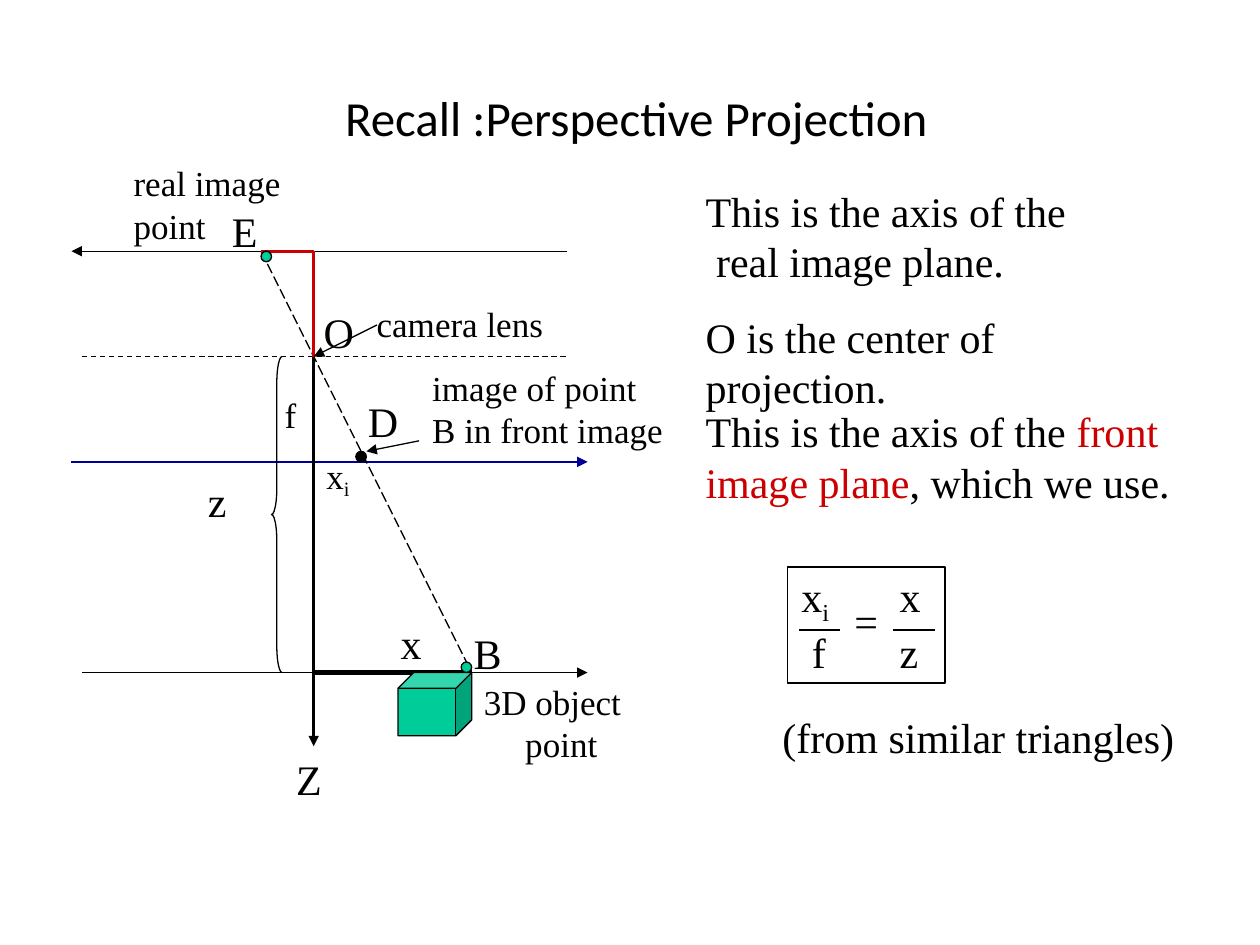
import pptx
import pptx.util
import pptx.dml.color
import pptx.enum.shapes
import pptx.enum.dml
import pptx.enum.text
import pptx.oxml

Inch, Pt = pptx.util.Inches, pptx.util.Pt
RGB = pptx.dml.color.RGBColor
KIND = pptx.enum.shapes.MSO_SHAPE
DASH = pptx.enum.dml.MSO_LINE
NS = 'xmlns:a="http://schemas.openxmlformats.org/drawingml/2006/main"'

BLACK = RGB(0, 0, 0)
RED = RGB(0xCC, 0, 0)
BLUE = RGB(0, 0, 0x99)
GREEN = RGB(0, 0xCC, 0x99)
SERIF = "Times New Roman"

# The diagram grid starts at the lens O; one unit is the focal length
UNIT = 0.836
DOT = 0.1  # size of a point, in units


def col(n):
    return Inch(2.49 + n * UNIT)


def row(n):
    return Inch(2.83 + n * UNIT)


def span(n):
    return Inch(n * UNIT)


def line(slide, start, end, color=BLACK, width=0.75, dash=None, arrow=False):
    """Straight line between two points given as (x, y) lengths."""
    kind = pptx.enum.shapes.MSO_CONNECTOR.STRAIGHT
    link = slide.shapes.add_connector(kind, *start, *end)
    link.line.color.rgb = color
    link.line.width = Pt(width)
    if dash:
        link.line.dash_style = dash
    if arrow:
        link.line._get_or_add_ln().append(pptx.oxml.parse_xml(
            f'<a:tailEnd {NS} type="triangle" w="med" len="med"/>'))
    link._element.spPr.append(pptx.oxml.parse_xml(f"<a:effectLst {NS}/>"))


def ray(slide, start, end, **look):
    """Line between two points of the diagram grid."""
    line(slide, (col(start[0]), row(start[1])),
         (col(end[0]), row(end[1])), **look)


def form(slide, kind, box, fill=None):
    """Preset shape with a thin black outline."""
    shape = slide.shapes.add_shape(kind, *box)
    shape.shadow.inherit = False
    if fill is None:
        shape.fill.background()
    else:
        shape.fill.solid()
        shape.fill.fore_color.rgb = fill
    shape.line.color.rgb = BLACK
    shape.line.width = Pt(0.75)
    return shape


def dot(slide, x, y, fill):
    form(slide, KIND.OVAL, (col(x), row(y), span(DOT), span(DOT)), fill)


def fill_in(para, parts, size):
    """Add runs; a part is text, "\\n", or (text, color, is_sub)."""
    para.line_spacing = Pt(1.2 * size)
    for part in parts:
        if part == "\n":
            para.add_line_break()
            continue
        words, color, sub = (part, BLACK, False) if isinstance(part, str) else part
        run = para.add_run()
        run.text = words
        run.font.name = SERIF
        run.font.size = Pt(size)
        run.font.color.rgb = color
        if sub:
            run.font._element.set("baseline", "-21000")


def text(slide, box, *paras, size=24, gap=0):
    """Text box without side margins; each para is a list of parts."""
    frame = slide.shapes.add_textbox(*map(Inch, box)).text_frame
    frame.word_wrap = True
    frame.margin_left = Inch(0.01)
    frame.margin_top = Inch(0.02)
    frame.margin_right = frame.margin_bottom = 0
    for i, parts in enumerate(paras):
        para = frame.add_paragraph() if i else frame.paragraphs[0]
        if i:
            para.space_before = Pt(gap)
        fill_in(para, parts, size)
    return frame


def head(slide):
    title = slide.shapes.title
    title.left, title.top, title.width, title.height = map(Inch, (0.5, 0.69, 9, 0.47))
    frame = title.text_frame
    frame.margin_left = Inch(0.1)
    frame.margin_top = frame.margin_right = frame.margin_bottom = 0
    frame.vertical_anchor = pptx.enum.text.MSO_ANCHOR.MIDDLE
    para = frame.paragraphs[0]
    para.alignment = pptx.enum.text.PP_ALIGN.CENTER
    run = para.add_run()
    run.text = "Recall :Perspective Projection"
    run.font.name, run.font.size = "Calibri", Pt(28)
    run.font.color.rgb = BLACK


def draw(slide):
    # Axes: real image, object, front image, lens
    ray(slide, (2.4, -1), (-2.3, -1), arrow=True)
    ray(slide, (-2.2, 3), (2.6, 3), arrow=True)
    ray(slide, (-2.3, 1), (2.6, 1), color=BLUE, width=1, arrow=True)
    ray(slide, (-2.2, 0), (2.4, 0), dash=DASH.DASH)
    # Projection ray from E through O to B
    ray(slide, (-0.5, -1), (1.5, 3), dash=DASH.LONG_DASH)
    # Sides of the two similar triangles
    ray(slide, (-0.5, -1), (0, -1), color=RED, width=1.5)
    ray(slide, (0, -1), (0, 0), color=RED, width=1.5)
    ray(slide, (0, 0), (0, 3.7), width=1.5, arrow=True)
    ray(slide, (0, 3), (1.5, 3), width=3)
    # Depth brace
    brace = form(slide, KIND.LEFT_BRACE, (col(-0.4), row(0), span(0.1), span(3)))
    brace.adjustments[0] = 2.5
    # Points B, E and D
    dot(slide, 1.5 - DOT, 3 - DOT, GREEN)
    dot(slide, -0.5, -1, GREEN)
    dot(slide, 0.5 - DOT, 1 - DOT, BLACK)
    # Pointers to the lens and to D
    ray(slide, (0.6, -0.3), (0, 0), arrow=True)
    ray(slide, (1, 0.8), (0.5, 0.9), arrow=True)
    # Object
    form(slide, KIND.CUBE, (col(0.8), row(3), span(0.7), span(0.6)), GREEN)


def label(slide):
    # Letters of the diagram
    for word, x, y in (("O", 2.56, 2.41), ("z", 1.64, 3.75), ("x", 3.17, 4.88),
                       ("B", 3.75, 4.96), ("D", 2.91, 3.12), ("E", 1.83, 1.61),
                       ("Z", 2.34, 5.96)):
        text(slide, (x, y, 0.3, 0.41), [word])
    # Captions
    for parts, box in ((["real image"], (1.05, 1.26, 1.25, 0.35)),
                       (["point"], (1.05, 1.6, 0.65, 0.35)),
                       (["f"], (2.25, 3.1, 0.15, 0.35)),
                       (["x", ("i", BLACK, True)], (2.58, 3.62, 0.3, 0.35)),
                       (["camera lens"], (2.98, 2.38, 1.4, 0.35)),
                       (["image of point", "\n", "B in front image"],
                        (3.42, 2.89, 1.95, 0.68))):
        text(slide, box, parts, size=20)
    frame = text(slide, (3.83, 5.38, 1.2, 0.68), ["3D object", "\n", " point"], size=20)
    props = frame.paragraphs[0]._p.get_or_add_pPr()
    props.set("marL", str(Inch(0.26)))
    props.set("indent", str(-Inch(0.26)))


def note(slide):
    text(slide, (5.59, 1.45, 3.85, 1.42),
         ["This is ", "the axis of the", "\n", " real image plane."],
         ["O is the center of", "\n", "projection."], gap=14.5)
    text(slide, (5.59, 3.2, 3.85, 0.81),
         ["This is ", "the axis of the ", ("front", RED, False), "\n",
          ("image plane", RED, False), ", ", "which ", "we use."])
    text(slide, (6.2, 5.63, 3.25, 0.41), ["(from similar triangles)"])


def ratio(slide):
    form(slide, KIND.RECTANGLE, map(Inch, (6.25, 4.5, 1.25, 0.92)))
    frame = text(slide, (6.35, 4.55, 1, 0.81),
                 ["x", ("i", BLACK, True), "\tx", "\n", " f\tz"])
    frame.paragraphs[0]._p.get_or_add_pPr().append(pptx.oxml.parse_xml(
        f'<a:tabLst {NS}><a:tab pos="{Inch(0.78)}" algn="l"/></a:tabLst>'))
    for x in (6.34, 7.09):
        line(slide, (Inch(x), Inch(5)), (Inch(x + 0.33), Inch(5)))
    text(slide, (6.77, 4.71, 0.25, 0.41), ["="])


def main():
    deck = pptx.Presentation()
    deck.slide_width, deck.slide_height = Inch(10), Inch(7.5)
    slide = deck.slides.add_slide(deck.slide_layouts[5])
    head(slide)
    draw(slide)
    label(slide)
    note(slide)
    ratio(slide)
    deck.save("out.pptx")


if __name__ == "__main__":
    main()
